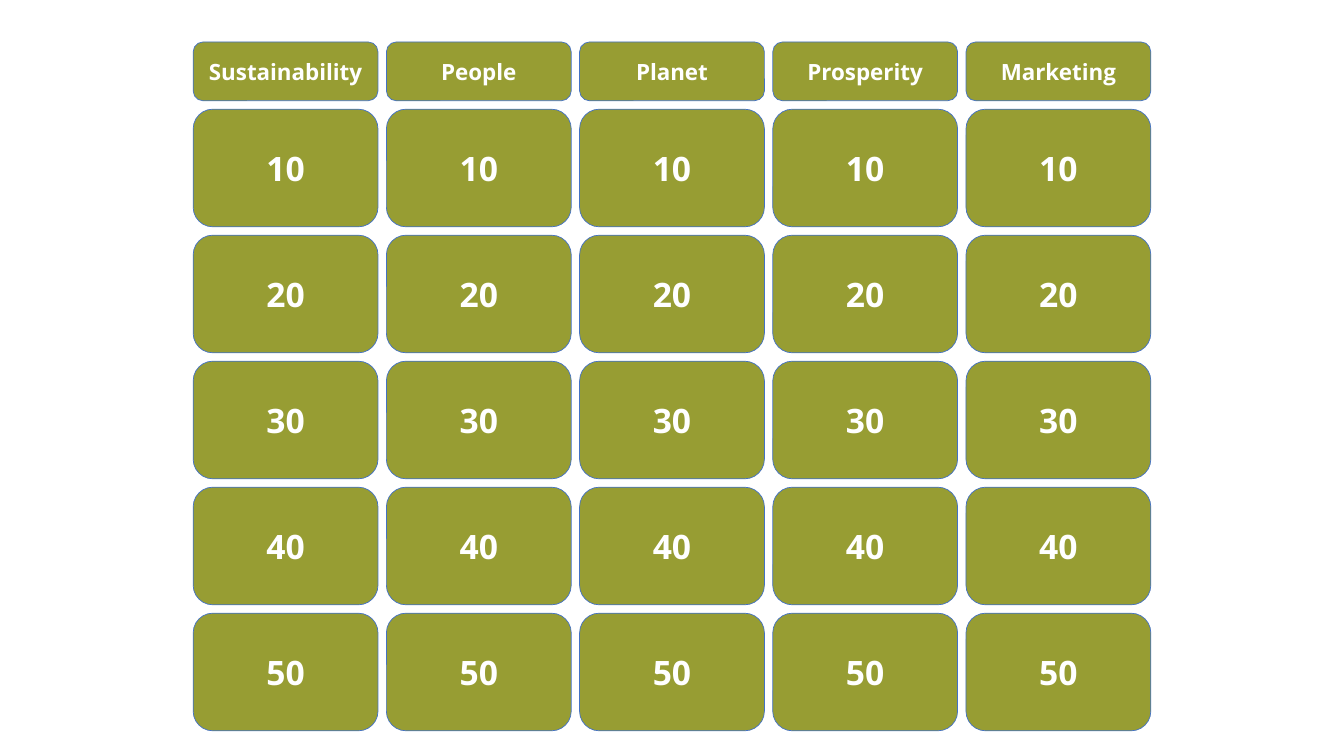
"""Build a quiz board with five topics and five point values each."""
from pptx import Presentation
from pptx.dml.color import RGBColor as Rgb
from pptx.enum.shapes import MSO_SHAPE as Form
from pptx.enum.text import MSO_ANCHOR as Anchor, PP_ALIGN as Align
from pptx.util import Pt

PX = 9525
THEME = {
    "fill": Rgb.from_string("979D33"),
    "line": Rgb.from_string("4472C4"),
    "text": Rgb.from_string("FFFFFF"),
    "font": "Open Sans",
    "edge": Pt(0.5),
    "head": Pt(16),
    "score": Pt(24),
}
TOPICS = ["Sustainability", "People", "Planet", "Prosperity", "Marketing"]
SCORES = [10, 20, 30, 40, 50]
LEFT, TOP, GAP = 184, 40, 8
WIDTH, HEAD, CELL = 176, 56, 112

deck = Presentation()
deck.slide_width, deck.slide_height = 1280 * PX, 720 * PX
slide = deck.slides.add_slide(deck.slide_layouts[6])


def add_tile(text, col, top, height, size):
    left = LEFT + col * (WIDTH + GAP)
    box = [n * PX for n in (left, top, WIDTH, height)]
    tile = slide.shapes.add_shape(Form.ROUNDED_RECTANGLE, *box)
    tile.shadow.inherit = False
    tile.fill.solid()
    tile.fill.fore_color.rgb = THEME["fill"]
    tile.line.color.rgb = THEME["line"]
    tile.line.width = THEME["edge"]
    frame = tile.text_frame
    frame.vertical_anchor = Anchor.MIDDLE
    para = frame.paragraphs[0]
    para.alignment = Align.CENTER
    run = para.add_run()
    run.text = text
    style = {"name": THEME["font"], "size": size, "bold": True}
    for key, value in style.items():
        setattr(run.font, key, value)
    run.font.color.rgb = THEME["text"]


for col, topic in enumerate(TOPICS):
    add_tile(topic, col, TOP, HEAD, THEME["head"])
    for row, score in enumerate(SCORES):
        top = TOP + HEAD + GAP + row * (CELL + GAP)
        add_tile(str(score), col, top, CELL, THEME["score"])

deck.save("out.pptx")
